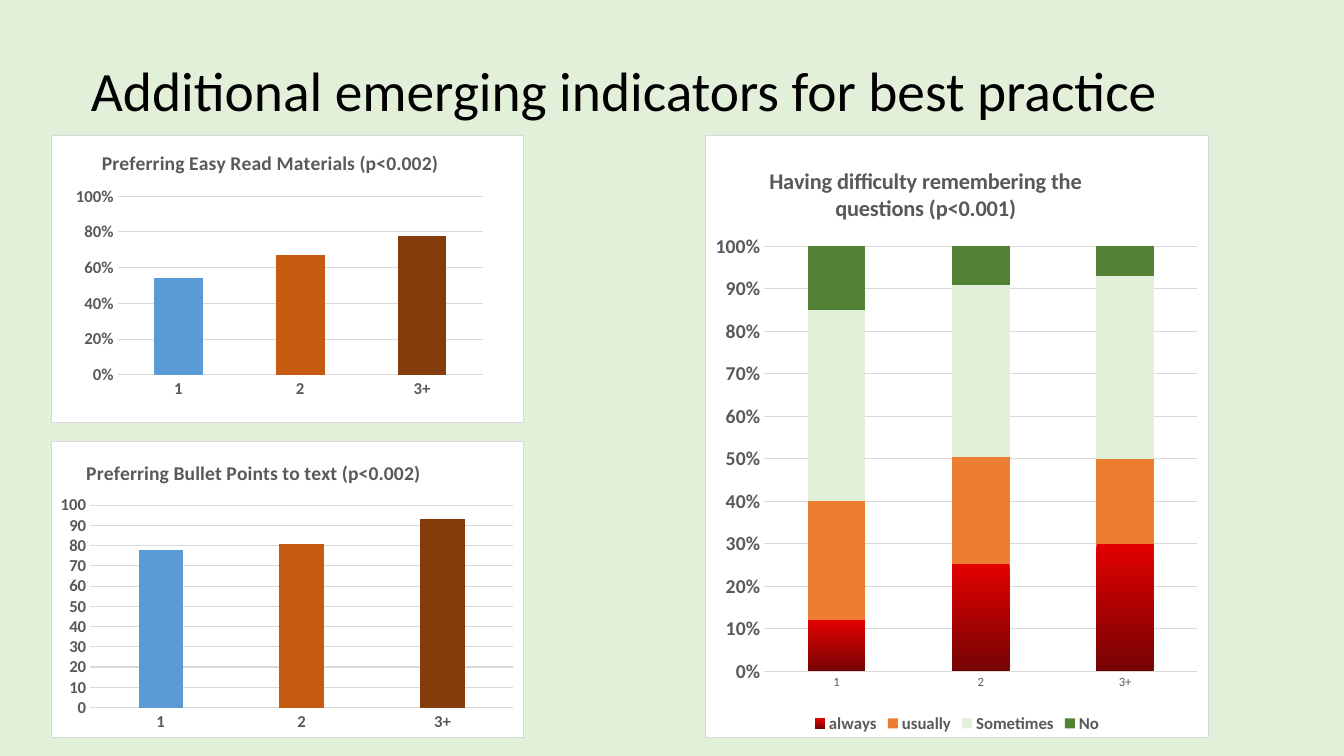
from dataclasses import dataclass

from lxml import etree
from pptx import Presentation
from pptx import util as u
from pptx.chart.axis import CategoryAxis, ValueAxis
from pptx.chart.chart import Chart
from pptx.chart.data import CategoryChartData
from pptx.dml.color import RGBColor
from pptx.dml.fill import FillFormat
from pptx.enum import chart as ch, text
from pptx.oxml import parse_xml
from pptx.oxml.ns import nsdecls, qn
from pptx.slide import Slide
from pptx.text.text import Font

PX = 914400 / 100.8


@dataclass(frozen=True)
class Theme:
    font: str = "Calibri"
    background: str = "E2F0D9"
    black: str = "000000"
    panel: str = "FFFFFF"
    rule: str = "D9D9D9"
    muted: str = "595959"
    bars: tuple[str, ...] = ("5B9BD5", "C55A11", "843C0B")
    always: tuple[str, ...] = ("E30000", "760303")
    usually: tuple[str, ...] = ("ED7D31",)
    sometimes: tuple[str, ...] = ("E2F0D9",)
    no: tuple[str, ...] = ("548235",)
    heading_size: float = 39.6
    base_size: float = 10
    label_size: float = 12


@dataclass(frozen=True)
class Box:
    left: int
    top: int
    width: int
    height: int

    def emu(self) -> tuple[int, ...]:
        return tuple(round(v * PX) for v in (self.left, self.top, self.width, self.height))


@dataclass(frozen=True)
class Bars:
    name: str
    values: tuple[int, ...]
    colors: tuple[str, ...] = ()
    by_point: bool = False


@dataclass(frozen=True)
class Panel:
    title: str
    box: Box
    title_at: tuple[int, int]
    plot: Box
    series: tuple[Bars, ...]
    major_unit: float
    stacked: bool = True
    gap: int = 150
    title_size: int = 14
    value_size: int = 12
    category_size: int = 12
    category_bold: bool = True
    legend: bool = False


THEME = Theme()
CATEGORIES = ("1", "2", "3+")
PANELS = (
    Panel(
        "Preferring Easy Read Materials (p<0.002)",
        Box(51, 135, 473, 288), (98, 145), Box(117, 196, 366, 179),
        (Bars("Series 1", (54, 67, 78), THEME.bars, by_point=True),
         Bars("Series 2", (46, 33, 22))),
        major_unit=0.2,
    ),
    Panel(
        "Preferring Bullet Points to text (p<0.002)",
        Box(51, 441, 473, 297), (82, 455), Box(90, 505, 424, 203),
        (Bars("Series 1", (78, 81, 93), THEME.bars, by_point=True),),
        major_unit=10, stacked=False, gap=219,
    ),
    Panel(
        "Having difficulty remembering the questions (p<0.001)",
        Box(705, 135, 504, 603), (765, 161), Box(764, 246, 434, 426),
        (Bars("always", (12, 25, 30), THEME.always),
         Bars("usually", (28, 25, 20), THEME.usually),
         Bars("Sometimes", (45, 40, 43), THEME.sometimes),
         Bars("No", (15, 9, 7), THEME.no)),
        major_unit=0.1, title_size=16, value_size=14,
        category_size=9, category_bold=False, legend=True,
    ),
)


def style_font(font: Font, size: float, color: str, bold: bool = False) -> None:
    font.name = THEME.font
    font.size = u.Pt(size)
    font.bold = bold
    font.color.rgb = RGBColor.from_string(color)


def paint(fill: FillFormat, colors: tuple[str, ...]) -> None:
    if not colors:
        fill.background()
    elif len(colors) == 1:
        fill.solid()
        fill.fore_color.rgb = RGBColor.from_string(colors[0])
    else:
        fill.gradient()
        fill.gradient_angle = 270
        for stop, color, position in zip(fill.gradient_stops, colors, (0, 1)):
            stop.color.rgb = RGBColor.from_string(color)
            stop.position = position


def set_layout(parent: etree._Element, index: int, values: dict[str, object]) -> None:
    for old in parent.findall(qn("c:layout")):
        parent.remove(old)
    layout = etree.Element(qn("c:layout"))
    manual = etree.SubElement(layout, qn("c:manualLayout"))
    for tag, value in values.items():
        etree.SubElement(manual, qn(f"c:{tag}")).set("val", str(value))
    parent.insert(index, layout)


def position_parts(chart: Chart, panel: Panel) -> None:
    box, plot = panel.box, panel.plot
    edges = {"xMode": "edge", "yMode": "edge"}
    x, y = panel.title_at
    set_layout(chart.chart_title.element, 1, edges | {
        "x": round((x - box.left) / box.width, 3),
        "y": round((y - box.top) / box.height, 3),
    })
    set_layout(chart.element.find(".//" + qn("c:plotArea")), 0, {"layoutTarget": "inner"} | edges | {
        "x": round((plot.left - box.left) / box.width, 3),
        "y": round((plot.top - box.top) / box.height, 3),
        "w": round(plot.width / box.width, 3),
        "h": round(plot.height / box.height, 3),
    })


def frame_chart(chart: Chart) -> None:
    chart.element.find(qn("c:chart")).addnext(parse_xml(
        f'<c:spPr {nsdecls("c", "a")}>'
        f'<a:solidFill><a:srgbClr val="{THEME.panel}"/></a:solidFill>'
        f'<a:ln w="{u.Pt(0.75)}"><a:solidFill><a:srgbClr val="{THEME.rule}"/></a:solidFill></a:ln>'
        '</c:spPr>'
    ))


def style_axes(category: CategoryAxis, value: ValueAxis, panel: Panel) -> None:
    for axis in (category, value):
        axis.major_tick_mark = axis.minor_tick_mark = ch.XL_TICK_MARK.NONE
    style_font(category.tick_labels.font, panel.category_size, THEME.muted, panel.category_bold)
    style_font(value.tick_labels.font, panel.value_size, THEME.muted, True)
    value.has_major_gridlines = True
    for line in (category.format.line, value.major_gridlines.format.line):
        line.width = u.Pt(0.75)
        paint(line.fill, (THEME.rule,))
    value.format.line.fill.background()
    value.major_unit = panel.major_unit
    value.tick_labels.number_format = "0%" if panel.stacked else "0"
    value.tick_labels.number_format_is_linked = False
    if not panel.stacked:
        value.minimum_scale, value.maximum_scale = 0, 100


def add_panel(s: Slide, panel: Panel) -> None:
    data = CategoryChartData()
    data.categories = CATEGORIES
    for bars in panel.series:
        data.add_series(bars.name, bars.values)
    kinds = ch.XL_CHART_TYPE
    kind = kinds.COLUMN_STACKED_100 if panel.stacked else kinds.COLUMN_CLUSTERED
    chart = s.shapes.add_chart(kind, *panel.box.emu(), data).chart
    style_font(chart.font, THEME.base_size, THEME.black)
    frame_chart(chart)

    chart.has_title = True
    tf = chart.chart_title.text_frame
    tf.text = panel.title
    style_font(tf.paragraphs[0].runs[0].font, panel.title_size, THEME.muted, True)
    chart.chart_title.include_in_layout = False
    position_parts(chart, panel)
    style_axes(chart.category_axis, chart.value_axis, panel)

    plot = chart.plots[0]
    plot.vary_by_categories = False
    plot.gap_width = panel.gap
    plot.overlap = 100 if panel.stacked else -27
    for series, bars in zip(plot.series, panel.series):
        series.invert_if_negative = False
        paint(series.format.fill, bars.colors[:1] if bars.by_point else bars.colors)
        if bars.by_point:
            for i, color in enumerate(bars.colors[1:], 1):
                paint(series.points[i].format.fill, (color,))

    chart.has_legend = panel.legend
    if panel.legend:
        chart.legend.position = ch.XL_LEGEND_POSITION.BOTTOM
        chart.legend.include_in_layout = False
        style_font(chart.legend.font, THEME.label_size, THEME.muted, True)


def add_heading(s: Slide, wording: str, box: Box) -> None:
    tf = s.shapes.add_textbox(*box.emu()).text_frame
    tf.word_wrap = True
    tf.vertical_anchor = text.MSO_ANCHOR.MIDDLE
    tf.text = wording
    p = tf.paragraphs[0]
    p.line_spacing = 0.9
    style_font(p.runs[0].font, THEME.heading_size, THEME.black)


def main() -> None:
    prs = Presentation()
    prs.slide_width, prs.slide_height = round(1344 * PX), round(756 * PX)
    s = prs.slides.add_slide(prs.slide_layouts[6])
    paint(s.background.fill, (THEME.background,))
    add_heading(s, "Additional emerging indicators for best practice", Box(81, 52, 1159, 83))
    for panel in PANELS:
        add_panel(s, panel)
    prs.save("out.pptx")


if __name__ == "__main__":
    main()
